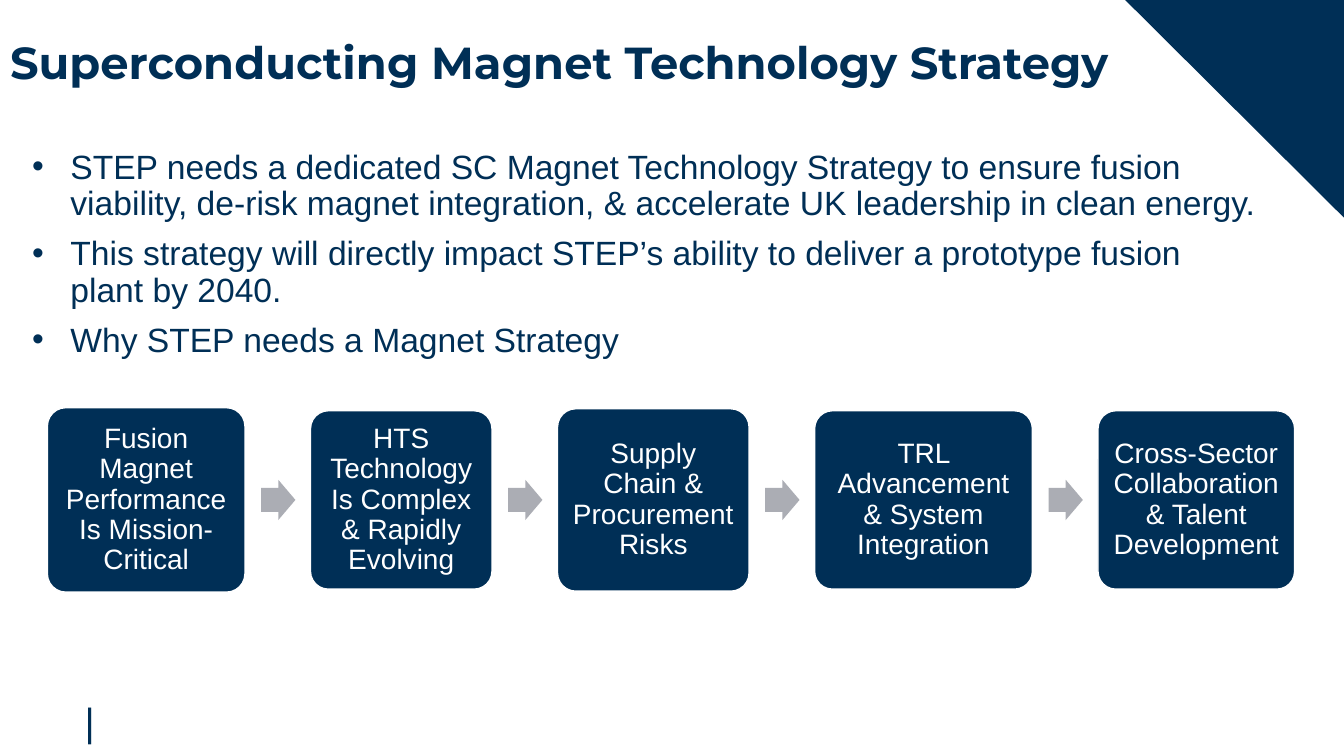
from dataclasses import dataclass

import lxml.etree
import pptx
import pptx.dml.color
import pptx.enum.shapes
import pptx.enum.text
import pptx.oxml.ns
import pptx.util
from pptx.util import Inches

NAVY = pptx.dml.color.RGBColor(0x00, 0x2F, 0x56)
GREY = pptx.dml.color.RGBColor(0xAB, 0xAD, 0xB4)
WHITE = pptx.dml.color.RGBColor(0xFF, 0xFF, 0xFF)
SHAPE = pptx.enum.shapes.MSO_SHAPE
ANCHOR = pptx.enum.text.MSO_ANCHOR
ALIGN = pptx.enum.text.PP_ALIGN

ROW_LEFT, ROW_MIDDLE, REASON_GAP = 0.47, 4.96, 0.65
ARROW_OFFSET, ARROW_WIDTH, ARROW_HEIGHT = 0.16, 0.34, 0.4


@dataclass(frozen=True)
class Reason:
    text: str
    width: float
    height: float


REASONS = [
    Reason("Fusion Magnet Performance Is Mission-Critical", 1.96, 1.83),
    Reason("HTS Technology Is Complex & Rapidly Evolving", 1.8, 1.77),
    Reason("Supply Chain & Procurement Risks", 1.9, 1.81),
    Reason("TRL Advancement & System Integration", 2.16, 1.77),
    Reason("Cross-Sector Collaboration & Talent Development", 1.95, 1.77),
]
STATEMENTS = [
    "STEP needs a dedicated SC Magnet Technology Strategy to ensure fusion viability, "
    "de-risk magnet integration, & accelerate UK leadership in clean energy.",
    "This strategy will directly impact STEP’s ability to deliver a prototype fusion plant by 2040.",
    "Why STEP needs a Magnet Strategy",
]


def add_bullet(paragraph, indent: float) -> None:
    properties = paragraph._p.get_or_add_pPr()
    properties.set("marL", str(Inches(indent)))
    properties.set("indent", str(-Inches(indent)))
    qn = pptx.oxml.ns.qn
    lxml.etree.SubElement(properties, qn("a:buFont")).set("typeface", "Arial")
    lxml.etree.SubElement(properties, qn("a:buChar")).set("char", "•")


def write(shape, *texts: str, size: float, color=NAVY, font: str = "Arial",
          bold: bool = False, align=ALIGN.LEFT, anchor=ANCHOR.TOP,
          inset: tuple[float, float] = (0.1, 0.05), wrap: bool = True,
          line_spacing: float = 1.0, space_before: float = 0,
          bullet_indent: float = 0) -> None:
    """Fill a shape with one paragraph per text."""
    frame = shape.text_frame
    frame.word_wrap = wrap
    frame.auto_size = pptx.enum.text.MSO_AUTO_SIZE.NONE
    frame.vertical_anchor = anchor
    frame.margin_left = frame.margin_right = Inches(inset[0])
    frame.margin_top = frame.margin_bottom = Inches(inset[1])
    for index, text in enumerate(texts):
        paragraph = frame.add_paragraph() if index else frame.paragraphs[0]
        paragraph.alignment = align
        paragraph.line_spacing = line_spacing
        paragraph.space_before = pptx.util.Pt(space_before if index else 0)
        if bullet_indent:
            add_bullet(paragraph, bullet_indent)
        run = paragraph.add_run()
        run.text = text
        run.font.name = font
        run.font.size = pptx.util.Pt(size)
        run.font.bold = bold
        run.font.color.rgb = color


def paint(shape, fill, line=None) -> None:
    shape.shadow.inherit = False
    shape.fill.solid()
    shape.fill.fore_color.rgb = fill
    if line is None:
        shape.line.fill.background()
    else:
        shape.line.color.rgb = line
        shape.line.width = pptx.util.Pt(1)


def add_in_row(shapes, kind, left: float, width: float, height: float):
    """Add a shape centred on the middle of the row."""
    return shapes.add_shape(kind, Inches(left), Inches(ROW_MIDDLE - height / 2),
                            Inches(width), Inches(height))


def add_reasons(slide) -> None:
    row = slide.shapes.add_group_shape().shapes
    left = ROW_LEFT
    for index, reason in enumerate(REASONS):
        if index:
            arrow = add_in_row(row, SHAPE.RIGHT_ARROW, left - REASON_GAP + ARROW_OFFSET,
                               ARROW_WIDTH, ARROW_HEIGHT)
            arrow.adjustments[0] = 0.6
            paint(arrow, GREY)
        card = add_in_row(row, SHAPE.ROUNDED_RECTANGLE, left, reason.width, reason.height)
        card.adjustments[0] = 0.1
        paint(card, NAVY, WHITE)
        write(card, reason.text, size=20, color=WHITE, align=ALIGN.CENTER,
              anchor=ANCHOR.MIDDLE, inset=(0.08, 0.08), line_spacing=0.9)
        left += reason.width + REASON_GAP


def main() -> None:
    deck = pptx.Presentation()
    deck.slide_width, deck.slide_height = Inches(13.33), Inches(7.5)
    slide = deck.slides.add_slide(deck.slide_layouts[5])

    outline = slide.shapes.build_freeform(Inches(11.16), 0)
    outline.add_line_segments([(Inches(13.33), 0), (Inches(13.33), Inches(2.16))])
    corner = outline.convert_to_shape()
    paint(corner, NAVY)

    footer_bar = slide.shapes.add_textbox(Inches(0.84), Inches(6.95), Inches(0.05), Inches(0.4))
    write(footer_bar, "|", size=28, anchor=ANCHOR.MIDDLE, inset=(0, 0), wrap=False)

    title = slide.shapes.title
    title.left, title.top = Inches(0), Inches(0.29)
    title.width, title.height = Inches(12.19), Inches(0.83)
    write(title, "Superconducting Magnet Technology Strategy", size=32,
          font="Montserrat", bold=True)

    case = slide.shapes.add_textbox(Inches(0.22), Inches(1.44), Inches(12.38), Inches(5.32))
    write(case, *STATEMENTS, size=24, line_spacing=0.9, space_before=10, bullet_indent=0.38)

    add_reasons(slide)
    deck.save("out.pptx")


if __name__ == "__main__":
    main()
